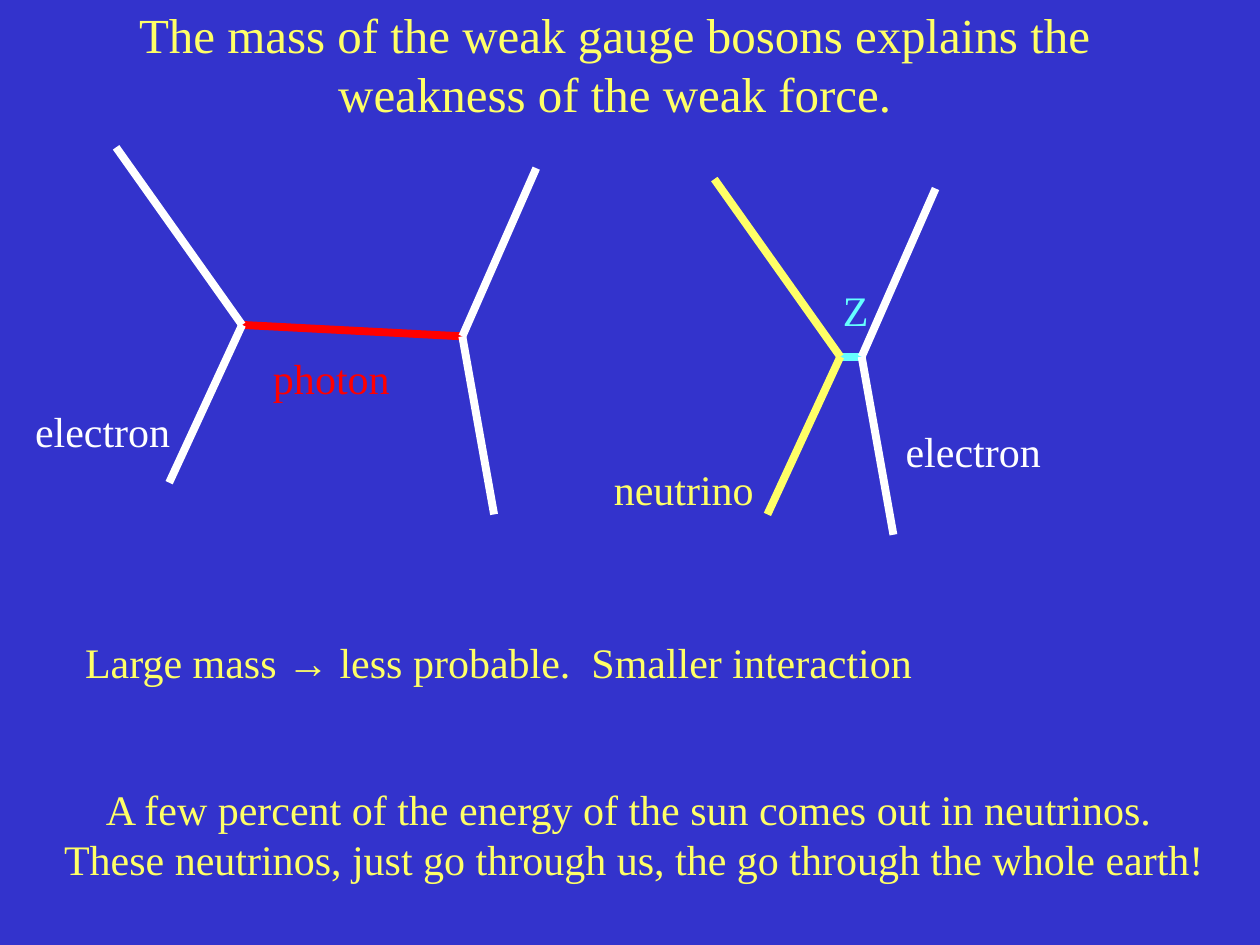
from pptx import Presentation, util as u
from pptx.dml.color import RGBColor
from pptx.enum import shapes, text
from pptx.oxml.ns import qn
from lxml import etree

FONT = "Times New Roman"
BLUE, WHITE, YELLOW, RED, CYAN = "3333CC", "FFFFFF", "FFFF66", "FF0000", "66FFFF"

# Outer ends of the particle tracks, relative to their vertex (cm)
LEFT_ENDS = [(-2.54, -3.58), (-1.47, 3.18)]
RIGHT_ENDS = [(1.49, -3.39), (0.64, 3.59)]


def set_color(color_format, color):
    color_format.rgb = RGBColor.from_string(color)


def write_text(shape, lines, size, color):
    frame = shape.text_frame
    frame.text = "\n".join(lines)
    frame.word_wrap = False
    frame.auto_size = text.MSO_AUTO_SIZE.NONE
    frame.vertical_anchor = text.MSO_ANCHOR.TOP
    for paragraph in frame.paragraphs:
        paragraph.alignment = text.PP_ALIGN.CENTER
        paragraph.space_before = u.Pt(0)
        paragraph.line_spacing = 1.0
        paragraph.font.name = FONT
        paragraph.font.size = u.Pt(size)
        set_color(paragraph.font.color, color)


def add_title(slide, lines):
    title = slide.shapes.title
    title.left, title.top = u.Cm(2.54), u.Cm(-0.03)
    title.width, title.height = u.Cm(19.7), u.Cm(2.64)
    write_text(title, lines, 28, YELLOW)


def add_label(slide, left, top, width, lines, color):
    height = 0.25 + 1.03 * len(lines)
    box = slide.shapes.add_textbox(u.Cm(left), u.Cm(top), u.Cm(width), u.Cm(height))
    write_text(box, lines, 24, color)


def add_track(slide, start, end, color):
    points = [u.Cm(value) for value in (*start, *end)]
    line = slide.shapes.add_connector(shapes.MSO_CONNECTOR.STRAIGHT, *points)
    line.line.width = u.Pt(4.5)
    set_color(line.line.color, color)
    etree.SubElement(line._element.spPr, qn("a:effectLst"))


def add_diagram(slide, left_vertex, right_vertex, left_color, boson_color):
    """Two scattering particles that exchange a boson."""
    add_track(slide, left_vertex, right_vertex, boson_color)
    for vertex, ends, color in [(left_vertex, LEFT_ENDS, left_color),
                                (right_vertex, RIGHT_ENDS, WHITE)]:
        for dx, dy in ends:
            add_track(slide, vertex, (vertex[0] + dx, vertex[1] + dy), color)


def main():
    presentation = Presentation()
    presentation.slide_width, presentation.slide_height = u.Cm(25.4), u.Cm(19.05)
    slide = presentation.slides.add_slide(presentation.slide_layouts.get_by_name("Title Only"))
    slide.background.fill.solid()
    set_color(slide.background.fill.fore_color, BLUE)

    add_title(slide, ["The mass of the weak gauge bosons explains the",
                      "weakness of the weak force."])

    # Photon exchange on the left, Z exchange on the right
    add_diagram(slide, (4.88, 6.55), (9.32, 6.78), WHITE, RED)
    add_diagram(slide, (16.94, 7.19), (17.37, 7.19), YELLOW, CYAN)

    # Particle names
    add_label(slide, 5.23, 6.99, 2.9, ["photon"], RED)
    add_label(slide, 16.74, 5.61, 1.02, ["Z"], CYAN)
    add_label(slide, 12.12, 9.22, 3.33, ["neutrino"], YELLOW)
    add_label(slide, 17.98, 8.46, 3.28, ["electron"], WHITE)
    add_label(slide, 0.43, 8.05, 3.28, ["electron"], WHITE)

    # Conclusions
    add_label(slide, 1.47, 12.7, 17.17,
              ["Large mass → less probable.  Smaller interaction"], YELLOW)
    add_label(slide, 1.07, 15.67, 23.42,
              ["A few percent of the energy of the sun comes out in neutrinos. ",
               "These neutrinos, just go through us, the go through the whole earth!"], YELLOW)

    presentation.save("out.pptx")


if __name__ == "__main__":
    main()
